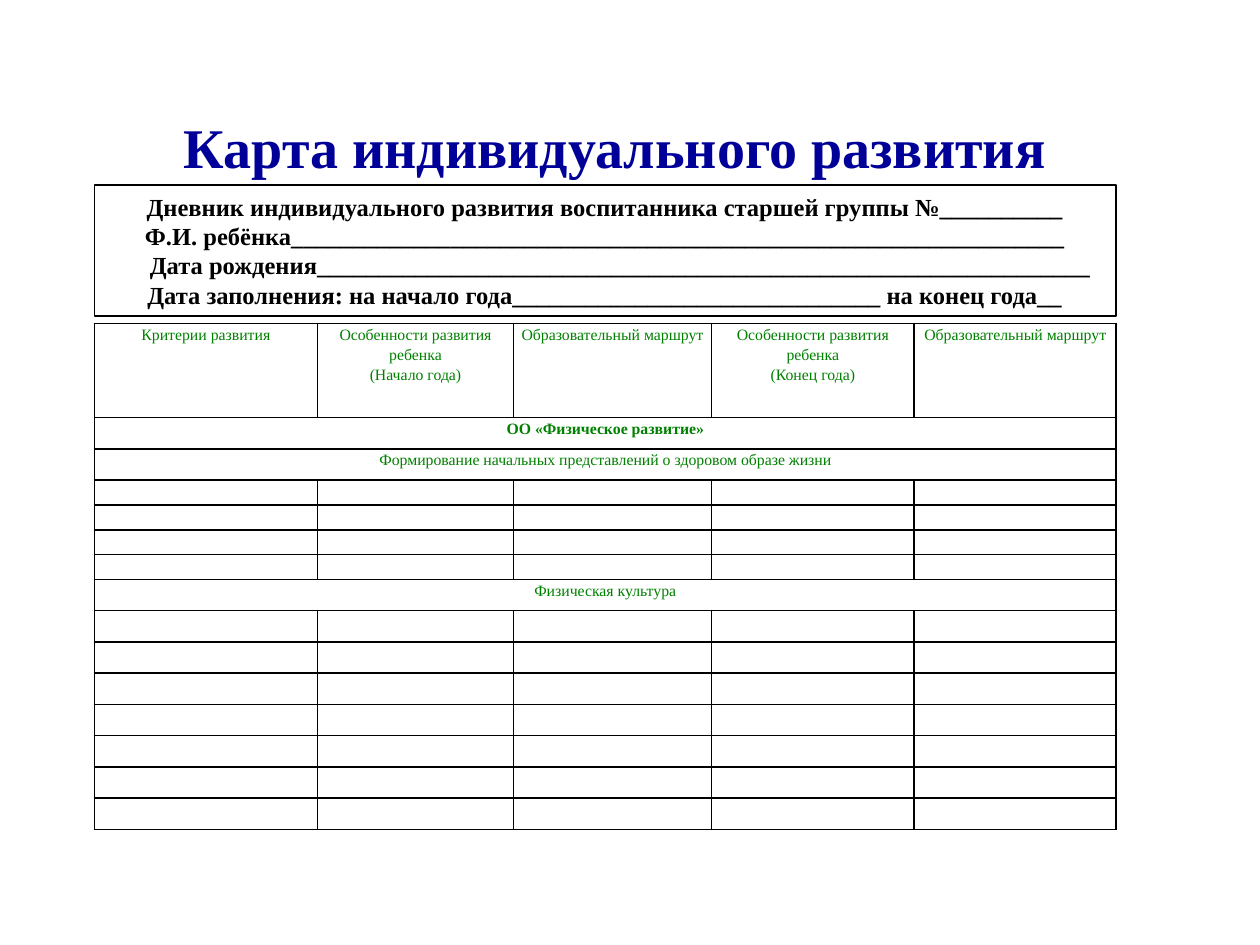
from dataclasses import dataclass

from lxml import etree
from pptx import Presentation
from pptx.dml.color import RGBColor
from pptx.enum.shapes import MSO_SHAPE
from pptx.enum.text import MSO_ANCHOR, MSO_AUTO_SIZE, PP_ALIGN
from pptx.oxml.ns import qn
from pptx.slide import Slide
from pptx.table import _Cell as Cell
from pptx.text.text import TextFrame
from pptx.util import Cm, Pt

CENTER = PP_ALIGN.CENTER
MIDDLE = MSO_ANCHOR.MIDDLE
NO_FIT = MSO_AUTO_SIZE.NONE
RECT = MSO_SHAPE.RECTANGLE


@dataclass(frozen=True)
class Style:
    size: float
    color: RGBColor
    bold: bool = False


@dataclass(frozen=True)
class Theme:
    face: str = "Times New Roman"
    paper: RGBColor = RGBColor(255, 255, 255)
    ink: RGBColor = RGBColor(0, 0, 0)
    title: Style = Style(32, RGBColor(0, 0, 0x99), True)
    form: Style = Style(14, RGBColor(0, 0, 0), True)
    cell: Style = Style(9, RGBColor(0, 0x80, 0))
    area: Style = Style(9, RGBColor(0, 0x80, 0), True)


@dataclass(frozen=True)
class Row:
    height: float
    texts: tuple[str, ...] = ()
    style: Style = Theme.cell


THEME = Theme()
LEFT, WIDTH = 1.9, 20.6
COLS = (4.5, 3.95, 3.99, 4.09, 4.07)
TALL, LOW = 0.63, 0.5
ROUTE = "Образовательный маршрут"
TRAITS = "Особенности развития ребенка"
ROWS = (
    Row(1.9, ("Критерии развития", f"{TRAITS}\n(Начало года)", ROUTE,
              f"{TRAITS}\n(Конец года)", ROUTE)),
    Row(TALL, ("ОО «Физическое развитие»",), THEME.area),
    Row(TALL, ("Формирование начальных представлений о здоровом образе жизни",)),
    *[Row(LOW)] * 4,
    Row(TALL, ("Физическая культура",)),
    *[Row(TALL)] * 7,
)
FORM = (
    "Дневник индивидуального развития воспитанника старшей группы №" + "_" * 10,
    "Ф.И. ребёнка" + "_" * 63,
    "Дата рождения" + "_" * 63,
    "Дата заполнения: на начало года" + "_" * 30 + " на конец года__",
)
BIRTH = 2


def write(frame: TextFrame, text: str, style: Style, space: float = 1.0) -> None:
    frame.text = text
    frame.word_wrap = True
    for para in frame.paragraphs:
        para.alignment = CENTER
        para.line_spacing = space
        for run in para.runs:
            font = run.font
            font.name = THEME.face
            font.size = Pt(style.size)
            font.bold = style.bold
            font.color.rgb = style.color


def draw_title(slide: Slide) -> None:
    title = slide.shapes.title
    title.left, title.top = Cm(3.3), Cm(2.13)
    title.width, title.height = Cm(18.2), Cm(1.63)
    frame = title.text_frame
    write(frame, "Карта индивидуального развития", THEME.title)
    frame.auto_size = NO_FIT
    frame.vertical_anchor = MIDDLE


def draw_form(slide: Slide) -> None:
    box = slide.shapes.add_shape(RECT, Cm(LEFT), Cm(3.73), Cm(WIDTH), Cm(2.64))
    box.shadow.inherit = False
    box.fill.solid()
    box.fill.fore_color.rgb = THEME.paper
    box.line.color.rgb = THEME.ink
    box.line.width = Pt(0.75)
    frame = box.text_frame
    write(frame, "\n".join(FORM), THEME.form)
    frame.vertical_anchor = MIDDLE
    props = frame.paragraphs[BIRTH]._p.get_or_add_pPr()
    props.set("marL", str(Cm(0.62)))


def format_cell(cell: Cell) -> None:
    """Give a cell its borders, fill, margins and the size of its empty line."""
    props = cell._tc.get_or_add_tcPr()
    for side in ("a:lnL", "a:lnR", "a:lnT", "a:lnB"):
        line = etree.SubElement(props, qn(side), w=str(Pt(1)))
        fill = etree.SubElement(line, qn("a:solidFill"))
        etree.SubElement(fill, qn("a:srgbClr"), val=str(THEME.ink))
    cell.fill.solid()
    cell.fill.fore_color.rgb = THEME.paper
    cell.margin_left = cell.margin_right = Cm(0.13)
    cell.margin_top = cell.margin_bottom = 0
    if not cell.text:
        para = cell.text_frame.paragraphs[0]._p
        etree.SubElement(para, qn("a:endParaRPr"), sz=str(THEME.cell.size * 100))


def draw_table(slide: Slide) -> None:
    height = sum(row.height for row in ROWS)
    table = slide.shapes.add_table(len(ROWS), len(COLS), Cm(LEFT), Cm(6.52),
                                   Cm(WIDTH), Cm(height)).table
    table.first_row = table.horz_banding = False
    for col, width in zip(table.columns, COLS):
        col.width = Cm(width)
    for i, row in enumerate(ROWS):
        table.rows[i].height = Cm(row.height)
        if len(row.texts) == 1:
            table.cell(i, 0).merge(table.cell(i, len(COLS) - 1))
        for j, text in enumerate(row.texts):
            write(table.cell(i, j).text_frame, text, row.style, 1.15)
    for cell in table.iter_cells():
        format_cell(cell)


def main() -> None:
    deck = Presentation()
    deck.slide_width, deck.slide_height = Cm(25.4), Cm(19.05)
    slide = deck.slides.add_slide(deck.slide_layouts.get_by_name("Title Only"))
    draw_title(slide)
    draw_table(slide)
    draw_form(slide)
    deck.save("out.pptx")


if __name__ == "__main__":
    main()
